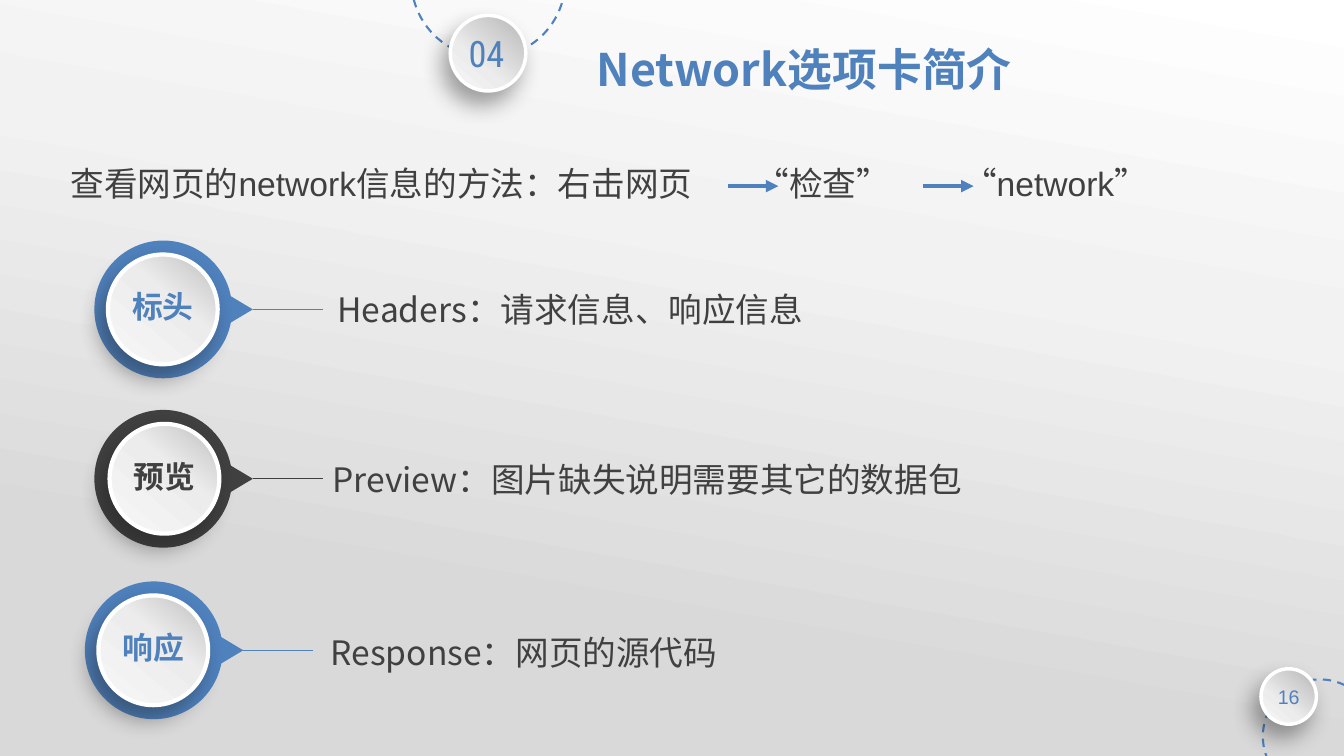
import math
from dataclasses import dataclass

from lxml import etree
from pptx import Presentation
from pptx import util as u
from pptx.dml.color import RGBColor
from pptx.enum import dml, shapes, text
from pptx.oxml.ns import qn

Pt = u.Pt
COLORS = {"blue": "4F81BD", "dark": "404040", "white": "FFFFFF", "shadow": "1A1A1A"}
BACKDROP = [(0, "FFFFFF"), (34, "F2F2F2"), (76, "D9D9D9")]
NUMBER_DISC = [(9, "BEBEBE"), (63, "ECECEC"), (100, "F7F7F7")]
LABEL_DISC = [(0, "BFBFBF"), (41, "ECECEC"), (100, "F7F7F7")]
CJK, ARIAL, ROBOTO = "Noto Sans CJK SC", "Arial", "Roboto Condensed"

RING_RADIUS, DISC_RADIUS, TIP_REACH, LINE_LENGTH = 49.2, 39.2, 64, 49.8
RING_ANGLES = [11, 90, 180, 270, 349]


@dataclass
class Style:
    size: float
    font: str
    color: str
    bold: bool = False


@dataclass
class Tab:
    label: str
    note: str
    cx: float
    cy: float
    disc_cx: float
    note_left: float
    note_cy: float
    color: str


@dataclass
class NumberMark:
    number: str
    cx: float
    cy: float
    radius: float
    label_cx: float
    orbit_cx: float
    orbit_cy: float
    orbit_radius: float
    mirrored_turn: float
    style: Style


TABS = [
    Tab("标头", "Headers：请求信息、响应信息", 116.6, 221, 116.3, 234, 221, "blue"),
    Tab("预览", "Preview：图片缺失说明需要其它的数据包", 116.6, 342, 117.5, 230.4, 342, "dark"),
    Tab("响应", "Response：网页的源代码", 109.8, 464.5, 109.5, 229, 466, "blue"),
]
MARKS = [
    NumberMark("16", 920.5, 497.5, 19.8, 920.5, 942.8, 526, 40.7, 99.1, Style(14, ARIAL, "blue")),
    NumberMark("04", 348.6, 38, 27, 347.5, 348.8, -14, 55, 0, Style(26, ROBOTO, "blue")),
]


def rgb(name: str) -> RGBColor:
    return RGBColor.from_string(COLORS[name])


def add_gradient(sp, stops: list, angle: float) -> None:
    sp.fill.gradient()
    sp.fill.gradient_angle = 360 - angle
    stop_list = next(sp._element.spPr.iter(qn("a:gsLst")))
    for old in list(stop_list):
        stop_list.remove(old)
    for position, color in stops:
        stop = etree.SubElement(stop_list, qn("a:gs"), pos=str(position * 1000))
        etree.SubElement(stop, qn("a:srgbClr"), val=color)


def add_run(p, words: str, style: Style):
    r = p.add_run()
    r.text = words
    f = r.font
    f.size, f.bold, f.name = Pt(style.size), style.bold, style.font
    f.color.rgb = rgb(style.color)
    east_asian = style.font if style.font == CJK else CJK
    etree.SubElement(r._r.get_or_add_rPr(), qn("a:ea"), typeface=east_asian)
    return r


def fill_text(sp, words: str, style: Style, align=text.PP_ALIGN.LEFT,
              anchor=text.MSO_ANCHOR.MIDDLE):
    tf = sp.text_frame
    tf.word_wrap, tf.auto_size = True, text.MSO_AUTO_SIZE.NONE
    tf.vertical_anchor = anchor
    p = tf.paragraphs[0]
    p.alignment = align
    add_run(p, words, style)
    return p


def place(sp, left: float, top: float, width: float, height: float) -> None:
    sp.left, sp.top, sp.width, sp.height = Pt(left), Pt(top), Pt(width), Pt(height)


def add_backdrop(s, width: float, height: float) -> None:
    """Cover the slide with a gradient, behind the placeholders."""
    sp = s.shapes.add_shape(shapes.MSO_SHAPE.RECTANGLE, 0, 0, Pt(width), Pt(height))
    sp.shadow.inherit = False
    sp.line.fill.background()
    add_gradient(sp, BACKDROP, 100)
    s.shapes._spTree.insert(2, sp._element)


def add_circle(s, cx: float, cy: float, radius: float):
    sp = s.shapes.add_shape(shapes.MSO_SHAPE.OVAL, Pt(cx - radius), Pt(cy - radius),
                            Pt(2 * radius), Pt(2 * radius))
    sp.shadow.inherit = False
    return sp


def add_disc(s, cx: float, cy: float, radius: float, stops: list, border: float) -> None:
    """Draw a white-rimmed gradient disc with a soft shadow to the lower left."""
    sp = add_circle(s, cx, cy, radius)
    add_gradient(sp, stops, 130)
    sp.line.color.rgb, sp.line.width = rgb("white"), Pt(border)
    effects = sp._element.spPr.find(qn("a:effectLst"))
    shadow = etree.SubElement(effects, qn("a:outerShdw"), blurRad=str(Pt(16)),
                              dist=str(Pt(10)), dir=str(120 * 60000), rotWithShape="0")
    color = etree.SubElement(shadow, qn("a:srgbClr"), val=COLORS["shadow"])
    etree.SubElement(color, qn("a:alpha"), val="40000")


def add_centred_label(s, words: str, cx: float, cy: float, style: Style) -> None:
    sp = s.shapes.add_textbox(Pt(cx - 30), Pt(cy - 18), Pt(60), Pt(36))
    tf = sp.text_frame
    tf.margin_left = tf.margin_right = tf.margin_top = tf.margin_bottom = 0
    fill_text(sp, words, style, text.PP_ALIGN.CENTER)


def add_line(s, left: float, right: float, y: float, color: str, width: float):
    c = s.shapes.add_connector(shapes.MSO_CONNECTOR.STRAIGHT, Pt(left), Pt(y), Pt(right), Pt(y))
    c.line.color.rgb, c.line.width = rgb(color), Pt(width)
    etree.SubElement(c._element.spPr, qn("a:effectLst"))
    return c


def add_mark(s, mark: NumberMark) -> None:
    orbit = add_circle(s, mark.orbit_cx, mark.orbit_cy, mark.orbit_radius)
    orbit.fill.background()
    orbit.line.color.rgb, orbit.line.width = rgb("blue"), Pt(1.5)
    orbit.line.dash_style = dml.MSO_LINE.DASH
    if mark.mirrored_turn:
        orbit.rotation = mark.mirrored_turn
        orbit._element.spPr.find(qn("a:xfrm")).set("flipH", "1")
    add_disc(s, mark.cx, mark.cy, mark.radius, NUMBER_DISC, 2.5)
    add_centred_label(s, mark.number, mark.label_cx, mark.cy, mark.style)


def ring_point(tab: Tab, degrees: float, slide_along: float = 0) -> tuple[int, int]:
    """Return a point on the ring, moved along its tangent by a share of the radius."""
    a = math.radians(degrees)
    x = math.cos(a) - slide_along * math.sin(a)
    y = math.sin(a) + slide_along * math.cos(a)
    return Pt(tab.cx + RING_RADIUS * x), Pt(tab.cy + RING_RADIUS * y)


def add_pointer_ring(s, tab: Tab) -> None:
    """Draw a solid circle whose right side runs out to a point."""
    builder = s.shapes.build_freeform(Pt(tab.cx + TIP_REACH), Pt(tab.cy))
    builder.add_line_segments([ring_point(tab, a) for a in RING_ANGLES], close=True)
    sp = builder.convert_to_shape()
    sp.shadow.inherit = False
    sp.fill.solid()
    sp.fill.fore_color.rgb = rgb(tab.color)
    sp.line.fill.background()
    sides = list(sp._element.spPr.iter(qn("a:lnTo")))[1:]
    for side, start, end in zip(sides, RING_ANGLES, RING_ANGLES[1:]):
        reach = 4 / 3 * math.tan(math.radians(end - start) / 4)
        side.tag = qn("a:cubicBezTo")
        controls = [ring_point(tab, start, reach), ring_point(tab, end, -reach)]
        for i, (x, y) in enumerate(controls):
            side.insert(i, etree.Element(qn("a:pt"), x=str(x - sp.left), y=str(y - sp.top)))


def add_tab(s, tab: Tab) -> None:
    add_pointer_ring(s, tab)
    line_start = tab.cx + TIP_REACH
    line_end = line_start + LINE_LENGTH
    c = add_line(s, line_start, line_end, tab.cy, tab.color, 0.5)
    add_disc(s, tab.disc_cx, tab.cy, DISC_RADIUS, LABEL_DISC, 3)
    add_centred_label(s, tab.label, tab.disc_cx, tab.cy - 2, Style(22, CJK, tab.color, True))
    note = s.shapes.add_textbox(Pt(tab.note_left), Pt(tab.note_cy - 18), Pt(492), Pt(36))
    fill_text(note, tab.note, Style(24, CJK, "dark"))
    if math.isclose(line_end, tab.note_left):
        c.end_connect(note, 1)


def add_method(s, body) -> None:
    """Write the click sequence, leaving a widened space for each arrow."""
    place(body, 43.2, 123.8, 857, 36)
    style = Style(24, ARIAL, "dark")
    p = fill_text(body, "查看网页的network信息的方法：右击网页", style, anchor=text.MSO_ANCHOR.TOP)
    p.line_spacing, p.space_before, p.space_after = Pt(18), Pt(0), Pt(6)
    pPr = p._p.get_or_add_pPr()
    pPr.set("marL", "0")
    pPr.set("indent", "0")
    etree.SubElement(pPr, qn("a:buNone"))
    for gap, step, arrow_left in [(40, "“检查”", 520), (46.7, "“network”", 659.5)]:
        space = add_run(p, " ", style)
        space._r.get_or_add_rPr().set("spc", str(round(gap * 100)))
        add_run(p, step, style)
        c = add_line(s, arrow_left, arrow_left + 36, 133, "blue", 3)
        etree.SubElement(c.line._get_or_add_ln(), qn("a:tailEnd"), type="triangle")


def main() -> None:
    prs = Presentation()
    prs.slide_width, prs.slide_height = Pt(960), Pt(540)
    s = prs.slides.add_slide(prs.slide_layouts[1])
    add_backdrop(s, 960, 540)
    for mark in MARKS:
        add_mark(s, mark)
    title = s.shapes.title
    place(title, 408, 26, 333, 46)
    fill_text(title, "Network选项卡简介", Style(32, CJK, "blue", True), text.PP_ALIGN.CENTER)
    add_method(s, s.placeholders[1])
    for tab in TABS:
        add_tab(s, tab)
    prs.save("out.pptx")


if __name__ == "__main__":
    main()
